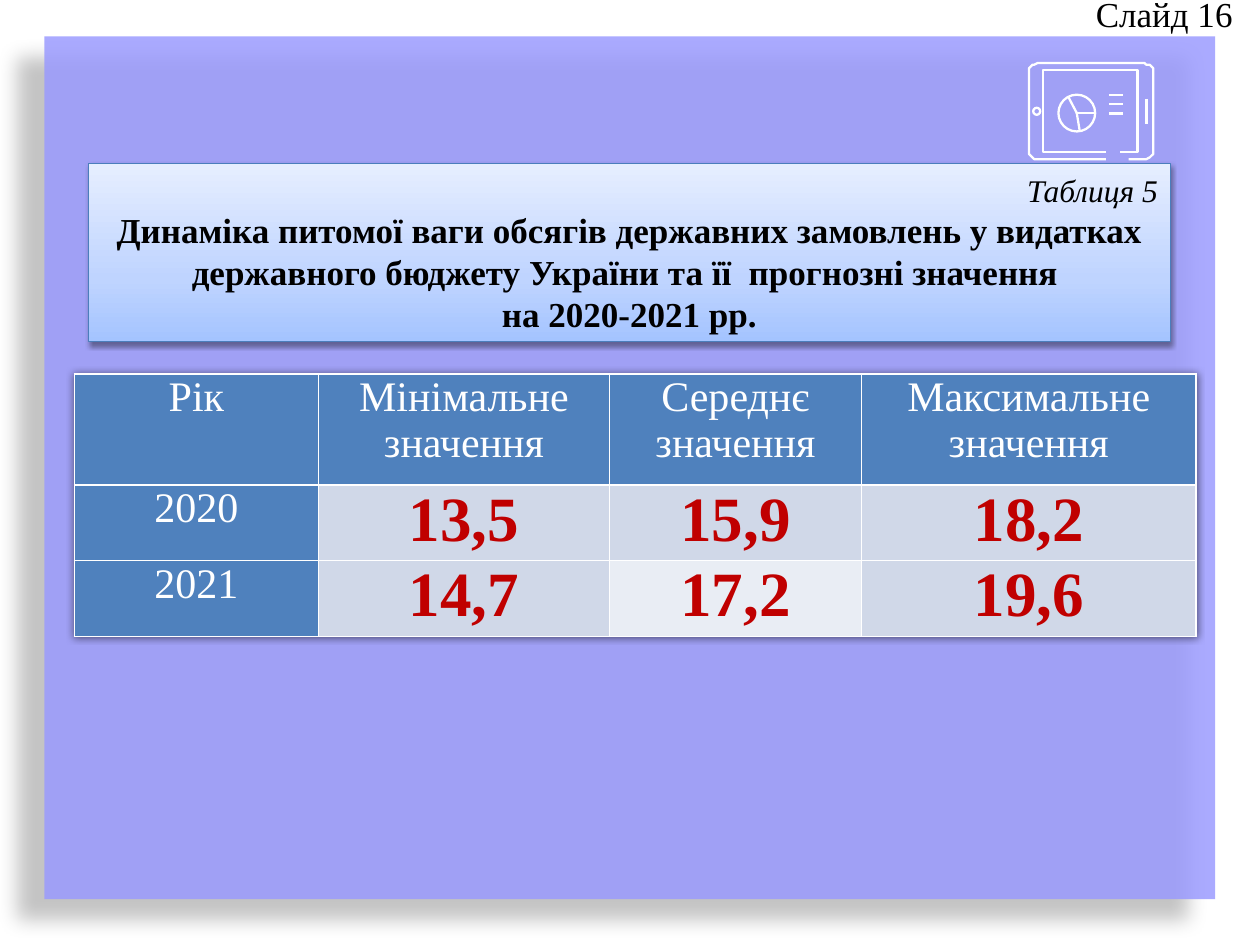
from copy import deepcopy
from math import cos, radians, sin

from lxml import etree
from pptx import Presentation
from pptx.dml.color import RGBColor
from pptx.enum import shapes, text
from pptx.oxml import ns
from pptx.util import Pt

BLACK = RGBColor(0x00, 0x00, 0x00)
WHITE = RGBColor(0xFF, 0xFF, 0xFF)
LILAC = RGBColor(0x99, 0x99, 0xFF)
BLUE = RGBColor(0x4F, 0x81, 0xBD)
EDGE_BLUE = RGBColor(0x4B, 0x7E, 0xBC)
PALE = RGBColor(0xD0, 0xD8, 0xE8)
PALEST = RGBColor(0xE9, 0xED, 0xF4)
RED = RGBColor(0xC0, 0x00, 0x00)
GRADIENT = [
    (0, RGBColor(0xA4, 0xC4, 0xFF)),
    (0.35, RGBColor(0xBF, 0xD4, 0xFF)),
    (1, RGBColor(0xE6, 0xEE, 0xFF)),
]


def make_shadow(blur, distance, angle, opacity):
    """Return an effect list with a black outer shadow; lengths in points."""
    effects = etree.Element(ns.qn("a:effectLst"))
    shadow = etree.SubElement(
        effects, ns.qn("a:outerShdw"), blurRad=str(Pt(blur)), dist=str(Pt(distance)),
        dir=str(angle * 60000), algn="ctr", rotWithShape="0")
    color = etree.SubElement(shadow, ns.qn("a:srgbClr"), val=str(BLACK))
    etree.SubElement(color, ns.qn("a:alpha"), val=str(opacity * 1000))
    return effects


def write(para, words, align, **font):
    para.alignment = align
    span = para.add_run()
    span.text = words
    color = font.pop("color", BLACK)
    for name, value in {"name": "Times New Roman", **font}.items():
        setattr(span.font, name, value)
    span.font.color.rgb = color


deck = Presentation()
deck.slide_width, deck.slide_height = Pt(720), Pt(540)
page = deck.slides.add_slide(deck.slide_layouts[5])
LEFT, CENTER, RIGHT = text.PP_ALIGN.LEFT, text.PP_ALIGN.CENTER, text.PP_ALIGN.RIGHT

# Backdrop
backdrop = page.shapes.add_shape(
    shapes.MSO_SHAPE.RECTANGLE, Pt(25.4), Pt(20.8), Pt(669), Pt(493))
backdrop.fill.solid()
backdrop.fill.fore_color.rgb = LILAC
backdrop_color = backdrop.element.spPr.find(".//" + ns.qn("a:srgbClr"))
etree.SubElement(backdrop_color, ns.qn("a:alpha"), val="83000")
backdrop.line.fill.background()
backdrop.element.spPr.append(make_shadow(11.8, 19.7, 141, 28))

# Slide label
label = page.shapes.add_textbox(Pt(600.5), Pt(-7.9), Pt(111), Pt(31.5))
label.text_frame.word_wrap = True
write(label.text_frame.paragraphs[0], "Слайд 16", RIGHT, size=Pt(20))

# Table heading
title = page.shapes.title
title.element.addprevious(backdrop.element)
title.left, title.top, title.width, title.height = Pt(50.4), Pt(93.6), Pt(618.5), Pt(101.5)
title.fill.gradient()
title.fill.gradient_angle = 90
stop_list = title.element.spPr.find(".//" + ns.qn("a:gsLst"))
stop_list.insert(1, deepcopy(stop_list[0]))
for stop, (position, color) in zip(title.fill.gradient_stops, GRADIENT):
    stop.position = position
    stop.color.rgb = color
title.line.color.rgb = EDGE_BLUE
title.line.width = Pt(0.75)
title.element.spPr.append(make_shadow(3.1, 1.6, 90, 38))
frame = title.text_frame
frame.word_wrap = True
frame.auto_size = text.MSO_AUTO_SIZE.NONE
frame.vertical_anchor = text.MSO_ANCHOR.MIDDLE
write(frame.paragraphs[0], "Таблиця 5", RIGHT, size=Pt(18), italic=True)
for words in (
    "Динаміка питомої ваги обсягів державних замовлень у видатках "
    "державного бюджету України та її  прогнозні значення ",
    "на 2020-2021 рр.",
):
    write(frame.add_paragraph(), words, CENTER, size=Pt(20), bold=True)

# Tablet icon: case and screen are open at the bottom
case_left, case_top, case_right, case_bottom, radius = 587.6, 36.4, 659.2, 90.7, 5
case = [(632.2, case_bottom)]
for x, y, start in (
    (case_left + radius, case_bottom - radius, 90),
    (case_left + radius, case_top + radius, 180),
    (case_right - radius, case_top + radius, 270),
    (case_right - radius, case_bottom - radius, 360),
):
    case += [(x + radius * cos(radians(start + turn)), y + radius * sin(radians(start + turn)))
             for turn in range(0, 91, 15)]
case.append((645.1, case_bottom))
screen = [(632.2, 87.2), (596.5, 87.2), (596.5, 40.3),
          (650.5, 40.3), (650.5, 87.2), (640.1, 87.2)]
icon_parts = []
for outline in (case, screen):
    builder = page.shapes.build_freeform(*outline[0], scale=float(Pt(1)))
    builder.add_line_segments(outline[1:], close=False)
    icon_parts.append(builder.convert_to_shape())

hub_x, hub_y = 615.3, 64.6
for x, y, size in ((hub_x, hub_y, 21), (592.4, 63.6, 4)):
    icon_parts.append(page.shapes.add_shape(
        shapes.MSO_SHAPE.OVAL, Pt(x - size / 2), Pt(y - size / 2), Pt(size), Pt(size)))
for part in icon_parts:
    part.fill.background()
    part.shadow.inherit = False

strokes = [(hub_x, hub_y, x, y) for x, y in ((610.6, 55.6), (617, 74.8), (625.6, 64.6))]
strokes += [(633.6, 54.1 + 5.4 * row, 641.5, 54.1 + 5.4 * row) for row in range(3)]
strokes.append((655.2, 56.5, 655.2, 71))
for stroke in strokes:
    line = page.shapes.add_connector(shapes.MSO_CONNECTOR.STRAIGHT, *map(Pt, stroke))
    etree.SubElement(line.element.spPr, ns.qn("a:effectLst"))
    icon_parts.append(line)
for part in icon_parts:
    part.line.color.rgb = WHITE
    part.line.width = Pt(1.3)

# Forecast table
rows = [
    ("Рік", "Мінімальне значення", "Середнє значення", "Максимальне значення"),
    ("2020", "13,5", "15,9", "18,2"),
    ("2021", "14,7", "17,2", "19,6"),
]
widths, heights = (139.5, 166.3, 144, 191.2), (63.4, 43, 43)
table_frame = page.shapes.add_table(
    len(rows), len(widths), Pt(42.5), Pt(213.8), Pt(sum(widths)), Pt(sum(heights)))
table = table_frame.table
table.horz_banding = False
table_properties = table_frame.element.find(".//" + ns.qn("a:tblPr"))
table_properties.insert(0, make_shadow(4, 0, 0, 50))
for column, width in zip(table.columns, widths):
    column.width = Pt(width)
for row, height in zip(table.rows, heights):
    row.height = Pt(height)
for r, row in enumerate(rows):
    for c, words in enumerate(row):
        cell = table.cell(r, c)
        for name, value in {"margin_left": Pt(5), "margin_right": Pt(5),
                            "margin_top": 0, "margin_bottom": 0}.items():
            setattr(cell, name, value)
        cell_properties = cell._tc.get_or_add_tcPr()
        for side in ("lnL", "lnR", "lnT", "lnB"):
            border = etree.SubElement(cell_properties, ns.qn("a:" + side), w=str(Pt(1)))
            fill = etree.SubElement(border, ns.qn("a:solidFill"))
            etree.SubElement(fill, ns.qn("a:srgbClr"), val=str(WHITE))
        heading = r == 0 or c == 0
        cell.fill.solid()
        cell.fill.fore_color.rgb = BLUE if heading else PALEST if (r, c) == (2, 2) else PALE
        write(cell.text_frame.paragraphs[0], words, CENTER, size=Pt(24 if heading else 36),
              bold=not heading, color=WHITE if heading else RED)

deck.save("out.pptx")
